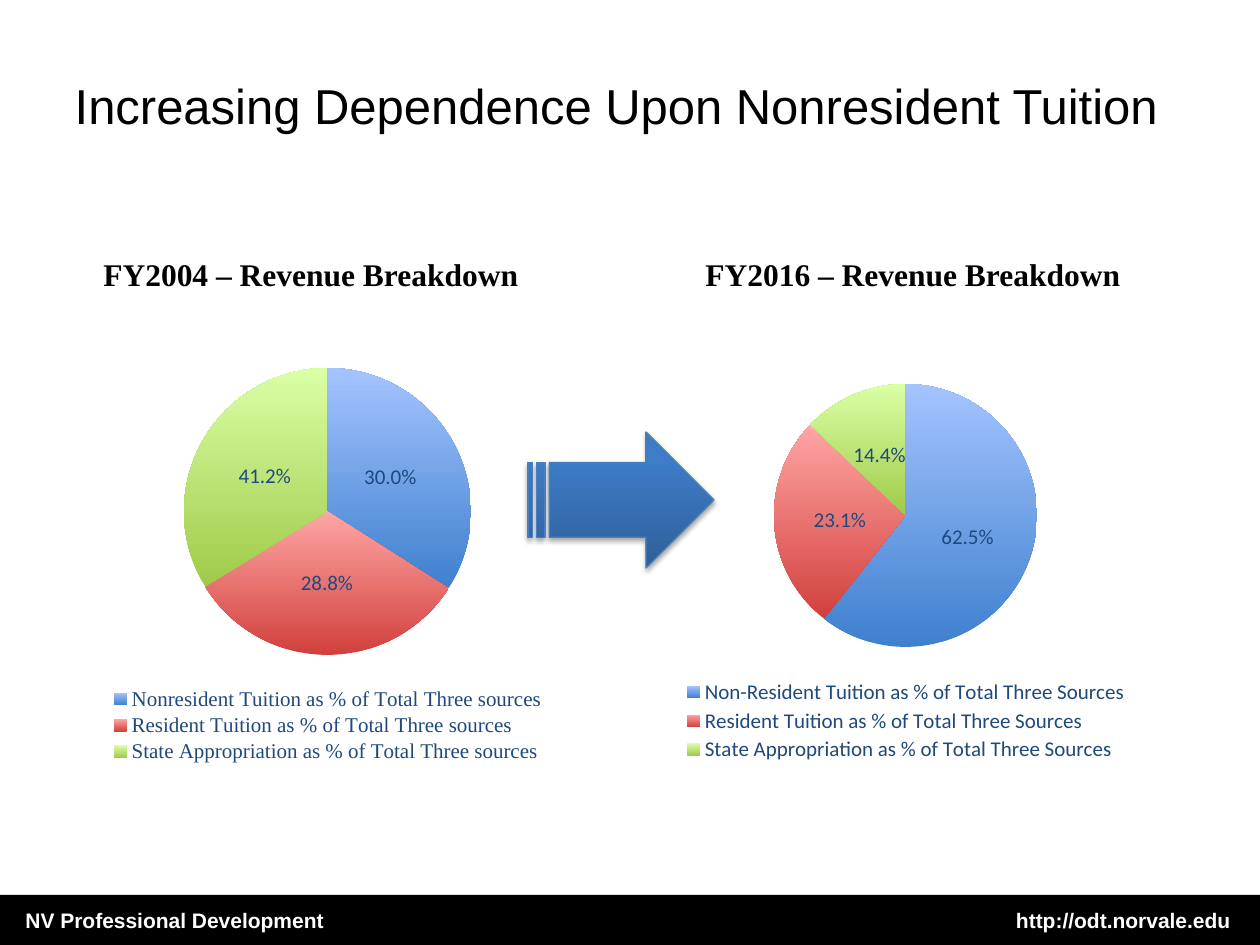
from lxml import etree
from pptx import Presentation
from pptx.chart.data import CategoryChartData
from pptx.dml.color import RGBColor
from pptx.enum.chart import XL_CHART_TYPE, XL_LABEL_POSITION, XL_LEGEND_POSITION
from pptx.enum.shapes import MSO_SHAPE
from pptx.enum.text import MSO_ANCHOR, PP_ALIGN
from pptx.oxml import parse_xml
from pptx.oxml.ns import nsdecls, qn
from pptx.util import Pt

PX = 914400 // 126
PIE, CENTER_LABEL = XL_CHART_TYPE.PIE, XL_LABEL_POSITION.CENTER
LEFT, CENTER, RIGHT = PP_ALIGN.LEFT, PP_ALIGN.CENTER, PP_ALIGN.RIGHT
TOP, MIDDLE = MSO_ANCHOR.TOP, MSO_ANCHOR.MIDDLE

BLACK = RGBColor(0, 0, 0)
WHITE = RGBColor(255, 255, 255)
NAVY = RGBColor(0x1F, 0x49, 0x7D)
ARROW_LINE = RGBColor(0x4B, 0x7E, 0xBC)
ARROW_FILL = (RGBColor(0x2F, 0x5F, 0x99), RGBColor(0x3D, 0x7C, 0xC7))
SLICES = [
    (RGBColor(0x3F, 0x80, 0xCE), RGBColor(0xA4, 0xC4, 0xFF)),
    (RGBColor(0xD1, 0x40, 0x3C), RGBColor(0xFF, 0xA6, 0xA5)),
    (RGBColor(0xA0, 0xCA, 0x4A), RGBColor(0xDA, 0xFF, 0xA5)),
]

# text, box, size, font, colour, bold, alignment, anchor
TEXTS = [
    ("Increasing Dependence Upon Nonresident Tuition",
     (32, 69, 1168, 72), 28, "Arial", BLACK, False, CENTER, TOP),
    ("FY2004 – Revenue Breakdown",
     (91, 249, 462, 102), 18, "Times New Roman", BLACK, True, LEFT, TOP),
    ("FY2016 – Revenue Breakdown",
     (693, 249, 462, 102), 18, "Times New Roman", BLACK, True, LEFT, TOP),
    ("NV Professional Development",
     (13, 895, 500, 50), 12, "Arial", WHITE, True, LEFT, MIDDLE),
    ("http://odt.norvale.edu",
     (743, 895, 500, 50), 12, "Arial", WHITE, True, RIGHT, MIDDLE),
]
FOOTER_BAR = (0, 895, 1260, 50)
ARROW = (528, 432, 186, 136)
CHARTS = [
    dict(box=(649, 367, 513, 402), pie=(774, 384, 263, 263),
         legend=(684, 676, 444, 90), legend_font="Calibri",
         rows=[("Non-Resident Tuition as % of Total Three Sources", 60.6, "62.5%"),
               ("Resident Tuition as % of Total Three Sources", 26.5, "23.1%"),
               ("State Appropriation as % of Total Three Sources", 12.9, "14.4%")]),
    dict(box=(68, 352, 517, 417), pie=(184, 368, 287, 287),
         legend=(110, 684, 436, 83), legend_font="Times New Roman",
         rows=[("Nonresident Tuition as % of Total Three sources", 34, "30.0%"),
               ("Resident Tuition as % of Total Three sources", 32.2, "28.8%"),
               ("State Appropriation as % of Total Three sources", 33.8, "41.2%")]),
]


def emu(box):
    return [v * PX for v in box]


def style(font, size, name, color, bold=False):
    font.size, font.name, font.bold = Pt(size), name, bold
    font.color.rgb = color


def fill_upward(fill, colors, end=1):
    """Gradient from the bottom colour to the top colour."""
    fill.gradient()
    fill.gradient_angle = 90
    for stop, color, position in zip(fill.gradient_stops, colors, (0, end)):
        stop.color.rgb = color
        stop.position = position


def add_text(slide, text, box, size, font, color, bold, align, anchor):
    tf = slide.shapes.add_textbox(*emu(box)).text_frame
    tf.word_wrap = True
    tf.vertical_anchor = anchor
    p = tf.paragraphs[0]
    p.text, p.alignment = text, align
    style(p.font, size, font, color, bold)


def manual_layout(box, frame, target=""):
    """Layout element that puts box, in slide px, inside the chart frame."""
    x, y, w, h = box
    left, top, width, height = frame
    values = {"x": (x - left) / width, "y": (y - top) / height,
              "w": w / width, "h": h / height}
    parts = "".join(f'<c:{k} val="{v:.4f}"/>' for k, v in values.items())
    return parse_xml(
        f'<c:layout {nsdecls("c")}><c:manualLayout>{target}'
        f'<c:xMode val="edge"/><c:yMode val="edge"/>{parts}'
        '</c:manualLayout></c:layout>')


def add_pie(slide, box, pie, legend, legend_font, rows):
    names, values, labels = zip(*rows)
    data = CategoryChartData()
    data.categories = names
    data.add_series("Series 1", values)
    chart = slide.shapes.add_chart(PIE, *emu(box), data).chart
    chart.has_title = False
    style(chart.font, 10, "Calibri", BLACK)

    chart.has_legend = True
    chart.legend.position = XL_LEGEND_POSITION.BOTTOM
    chart.legend.include_in_layout = False
    style(chart.legend.font, 12, legend_font, NAVY)

    plot = chart.plots[0]
    plot.vary_by_categories = True
    series = plot.series[0]
    dl = series.data_labels
    dl.show_percentage, dl.show_value = True, False
    dl.number_format, dl.number_format_is_linked = "0.0%", False
    dl.position = CENTER_LABEL
    style(dl.font, 12, "Calibri", NAVY)
    for i, (colors, label) in enumerate(zip(SLICES, labels)):
        point = series.points[i]
        fill_upward(point.format.fill, colors)
        point.format.line.fill.background()
        p = point.data_label.text_frame.paragraphs[0]
        r = p.add_run()
        r.text = label
        style(r.font, 12, "Calibri", NAVY)
        point.data_label.position = CENTER_LABEL

    root = chart.element
    area = root.find(".//" + qn("c:plotArea"))
    key = root.find(".//" + qn("c:legend"))
    for parent in (area, key):
        for old in parent.findall(qn("c:layout")):
            parent.remove(old)
    area.insert(0, manual_layout(pie, box, '<c:layoutTarget val="inner"/>'))
    key.find(qn("c:legendPos")).addnext(manual_layout(legend, box))


def add_arrow(slide):
    s = slide.shapes.add_shape(MSO_SHAPE.STRIPED_RIGHT_ARROW, *emu(ARROW))
    s.adjustments[0], s.adjustments[1] = 0.55, 0.5
    fill_upward(s.fill, ARROW_FILL, 0.8)
    s.line.color.rgb = ARROW_LINE
    s.line.width = Pt(0.75)
    s.shadow.inherit = False
    effects = s.element.spPr.find(qn("a:effectLst"))
    shadow = etree.SubElement(effects, qn("a:outerShdw"), blurRad=str(Pt(3.1)),
                              dist=str(Pt(1.8)), dir="5400000", rotWithShape="0")
    color = etree.SubElement(shadow, qn("a:srgbClr"), val=str(BLACK))
    etree.SubElement(color, qn("a:alpha"), val="35000")


def main():
    prs = Presentation()
    prs.slide_width, prs.slide_height = 1260 * PX, 945 * PX
    slide = prs.slides.add_slide(prs.slide_layouts[6])
    bar = slide.shapes.add_shape(MSO_SHAPE.RECTANGLE, *emu(FOOTER_BAR))
    bar.shadow.inherit = False
    bar.fill.solid()
    bar.fill.fore_color.rgb = BLACK
    bar.line.fill.background()
    for chart in CHARTS:
        add_pie(slide, **chart)
    for text in TEXTS:
        add_text(slide, *text)
    add_arrow(slide)
    prs.save("out.pptx")


if __name__ == "__main__":
    main()
